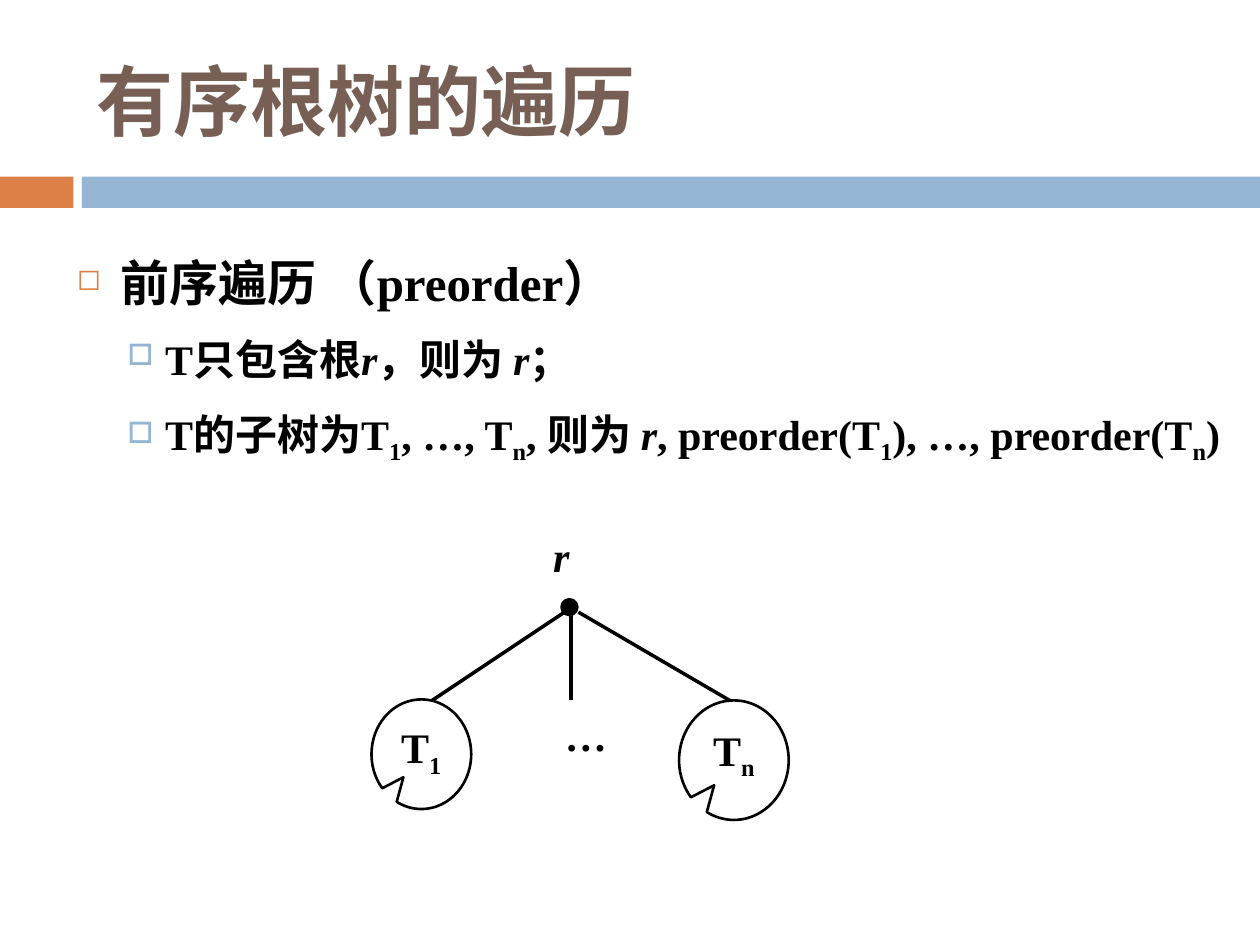
"""Build the slide on preorder traversal of ordered rooted trees."""
import pptx
import pptx.dml.color
import pptx.enum.shapes
import pptx.enum.text
import pptx.oxml
import pptx.oxml.ns
import pptx.util

Cm, Pt = pptx.util.Cm, pptx.util.Pt
SHAPE = pptx.enum.shapes.MSO_SHAPE
ALIGN = pptx.enum.text.PP_ALIGN
ANCHOR = pptx.enum.text.MSO_ANCHOR

THEME = {
    "font": "Times New Roman",
    "title": "775F55", "text": "000000", "accent": "DD8047", "band": "94B6D2",
    "title_size": 44, "body_size": 28, "sub_size": 24,
}
ITALIC = {"italic": True}
SUB = {"baseline": -25000}


def rgb(name):
    return pptx.dml.color.RGBColor.from_string(THEME[name])


def add_text(p, text, size="sub_size", color="text", italic=False, baseline=0):
    r = p.add_run()
    r.text = text
    r.font.name = THEME["font"]
    r.font.size = Pt(THEME[size])
    r.font.bold = True
    r.font.italic = italic
    r.font.color.rgb = rgb(color)
    if baseline:
        r.font._element.set("baseline", str(baseline))


prs = pptx.Presentation()
prs.slide_width, prs.slide_height = Cm(25.4), Cm(19.05)
s = prs.slides.add_slide(prs.slide_layouts[6])

for left, width, color in [(0, 1.48, "accent"), (1.65, 23.75, "band")]:
    sp = s.shapes.add_shape(SHAPE.RECTANGLE, Cm(left), Cm(3.56), Cm(width), Cm(0.63))
    sp.shadow.inherit = False
    sp.fill.solid()
    sp.fill.fore_color.rgb = rgb(color)
    sp.line.fill.background()

tf = s.shapes.add_textbox(Cm(1.7), Cm(0.64), Cm(22.66), Cm(2.74)).text_frame
tf.word_wrap = True
tf.vertical_anchor = ANCHOR.MIDDLE
add_text(tf.paragraphs[0], "有序根树的遍历", size="title_size", color="title")

LEVELS = [
    {"size": "body_size", "left": 0.89, "hang": 0.89, "bullet": "◻", "color": "accent", "scale": 60},
    {"size": "sub_size", "left": 1.78, "hang": 0.76, "bullet": "□", "color": "band", "scale": 70},
]
BODY = [
    (0, [("前序遍历 （preorder）", {})]),
    (1, [("T只包含根", {}), ("r", ITALIC), ("，则为 ", {}), ("r", ITALIC), ("；", {})]),
    (1, [("T的子树为T", {}), ("1", SUB), (", …, T", {}), ("n", SUB), (", 则为 ", {}),
         ("r", ITALIC), (", preorder(T", {}), ("1", SUB), ("), …, preorder(T", {}),
         ("n", SUB), (")", {})]),
]
tf = s.shapes.add_textbox(Cm(1.3), Cm(4.72), Cm(23.8), Cm(5.79)).text_frame
tf.word_wrap = True
for i, (depth, runs) in enumerate(BODY):
    level = LEVELS[depth]
    p = tf.add_paragraph() if i else tf.paragraphs[0]
    p.level = depth
    p.line_spacing = 1.2
    p.space_before = Pt(0.3 * THEME[level["size"]])
    pPr = p._p.get_or_add_pPr()
    pPr.set("marL", str(Cm(level["left"])))
    pPr.set("indent", str(-Cm(level["hang"])))
    ns = pptx.oxml.ns.nsdecls("a")
    for xml in (
        f'<a:buClr {ns}><a:srgbClr val="{THEME[level["color"]]}"/></a:buClr>',
        f'<a:buSzPct {ns} val="{level["scale"] * 1000}"/>',
        f'<a:buChar {ns} char="{level["bullet"]}"/>',
    ):
        pPr.append(pptx.oxml.parse_xml(xml))
    for text, fmt in runs:
        add_text(p, text, size=level["size"], **fmt)

sp = s.shapes.add_shape(SHAPE.OVAL, Cm(11.33), Cm(12.09), Cm(0.3), Cm(0.3))
sp.shadow.inherit = False
sp.fill.solid()
sp.fill.fore_color.rgb = rgb("text")
sp.line.color.rgb = rgb("text")
sp.line.width = Pt(2)

for x1, y1, x2 in [(11.38, 12.34, 8.71), (11.66, 12.34, 14.71), (11.51, 12.12, 11.51)]:
    edge = s.shapes.add_connector(
        pptx.enum.shapes.MSO_CONNECTOR.STRAIGHT, Cm(x1), Cm(y1), Cm(x2), Cm(14.12))
    edge.line.color.rgb = rgb("text")
    edge.line.width = Pt(2)
    edge._element.spPr.append(
        pptx.oxml.parse_xml(f'<a:effectLst {pptx.oxml.ns.nsdecls("a")}/>'))

tf = s.shapes.add_textbox(Cm(10.9), Cm(10.57), Cm(1.5), Cm(1.3)).text_frame
tf.word_wrap = True
p = tf.paragraphs[0]
p.alignment = ALIGN.JUSTIFY
add_text(p, "r", italic=True)

SUBTREES = [
    (7.49, 14.1, 2.01, 2.21, "T", "1", True),
    (13.69, 14.12, 2.21, 2.41, "T", "n", True),
    (10.31, 13.92, 3, 1.8, "…", "", False),
]
for left, top, width, height, label, index, outlined in SUBTREES:
    sp = s.shapes.add_shape(
        SHAPE.OVAL_CALLOUT, Cm(left), Cm(top), Cm(width), Cm(height))
    sp.adjustments[0], sp.adjustments[1] = -0.18, 0.21
    sp.shadow.inherit = False
    sp.fill.background()
    if outlined:
        sp.line.color.rgb = rgb("text")
        sp.line.width = Pt(1.5)
    else:
        sp.line.fill.background()
    tf = sp.text_frame
    tf.word_wrap = False
    tf.vertical_anchor = ANCHOR.TOP
    p = tf.paragraphs[0]
    p.alignment = ALIGN.CENTER
    add_text(p, label)
    if index:
        add_text(p, index, **SUB)

prs.save("out.pptx")
